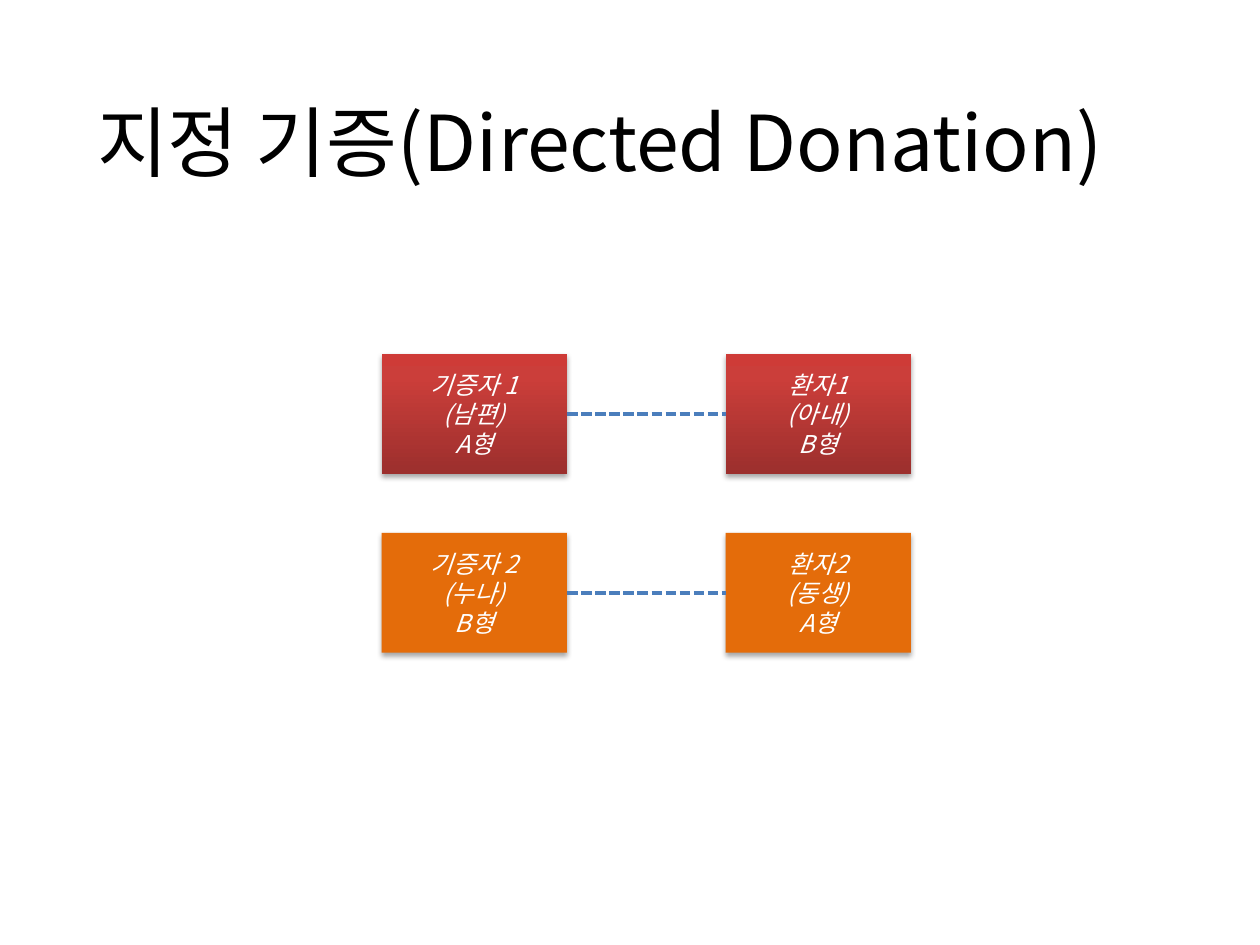
from copy import deepcopy

from lxml.etree import SubElement
from pptx import Presentation
from pptx.dml.color import RGBColor
from pptx.enum.dml import MSO_LINE
from pptx.enum.shapes import MSO_CONNECTOR, MSO_SHAPE
from pptx.enum.text import MSO_ANCHOR, MSO_AUTO_SIZE, PP_ALIGN
from pptx.oxml.ns import qn
from pptx.util import Inches, Pt

FONT = "Noto Sans CJK KR"
COLORS = {
    "title": "000000",
    "box_text": "FFFFFF",
    "orange": "E46C0A",
    "link": "4B7EBC",
    "shadow": "000000",
}
RED_GRADIENT = [(0, "9C2F2D"), (0.8, "CB3E3A"), (1, "CE3B37")]

BOX_WIDTH, BOX_HEIGHT = 1.47, 0.95
DONOR_LEFT, PATIENT_LEFT = 3.03, 5.76
FIRST_TOP, ROW_STEP = 2.81, 1.42

# Donor lines, patient lines, whether the pair is red
PAIRS = [
    ("기증자 1\n(남편)\nA형", "환자1\n(아내)\nB형", True),
    ("기증자 2\n(누나)\nB형", "환자2\n(동생)\nA형", False),
]


def rgb(name):
    return RGBColor.from_string(COLORS[name])


def format_runs(paragraph, size, color, italic=None):
    for run in paragraph.runs:
        font = run.font
        font.size, font.name, font.italic = Pt(size), FONT, italic
        font.color.rgb = rgb(color)
        SubElement(run._r.get_or_add_rPr(), qn("a:ea"), typeface=FONT)


def add_title(slide, text):
    title = slide.shapes.title
    title.left, title.top = Inches(0.67), Inches(0.44)
    title.width, title.height = Inches(8.62), Inches(1.45)
    text_frame = title.text_frame
    text_frame.text = text
    text_frame.word_wrap = True
    text_frame.auto_size = MSO_AUTO_SIZE.NONE
    text_frame.vertical_anchor = MSO_ANCHOR.MIDDLE
    paragraph = text_frame.paragraphs[0]
    paragraph.alignment = PP_ALIGN.LEFT
    paragraph.line_spacing = 0.9
    format_runs(paragraph, 44, "title")


def fill_red_gradient(shape):
    shape.fill.gradient()
    shape.fill.gradient_angle = 90
    # The default gradient has two stops; a third is needed
    stop_list = shape._element.spPr.find(".//" + qn("a:gsLst"))
    stop_list.append(deepcopy(stop_list[-1]))
    for stop, (position, color) in zip(shape.fill.gradient_stops, RED_GRADIENT):
        stop.position = position
        stop.color.rgb = RGBColor.from_string(color)


def add_soft_shadow(shape):
    shape.shadow.inherit = False
    effects = shape._element.spPr.find(qn("a:effectLst"))
    shadow = SubElement(effects, qn("a:outerShdw"), blurRad=str(Pt(3.1)),
                        dist=str(Pt(1.8)), dir="5400000", rotWithShape="0")
    color = SubElement(shadow, qn("a:srgbClr"), val=COLORS["shadow"])
    SubElement(color, qn("a:alpha"), val="35000")


def add_person_box(slide, left, top, text, is_red):
    shape = slide.shapes.add_shape(MSO_SHAPE.RECTANGLE, Inches(left), Inches(top),
                                   Inches(BOX_WIDTH), Inches(BOX_HEIGHT))
    if is_red:
        fill_red_gradient(shape)
    else:
        shape.fill.solid()
        shape.fill.fore_color.rgb = rgb("orange")
    shape.line.fill.background()
    add_soft_shadow(shape)

    text_frame = shape.text_frame
    text_frame.text = text
    text_frame.word_wrap = True
    text_frame.vertical_anchor = MSO_ANCHOR.MIDDLE
    for paragraph in text_frame.paragraphs:
        paragraph.alignment = PP_ALIGN.CENTER
        format_runs(paragraph, 14, "box_text", italic=True)
    return shape


def add_dashed_link(slide, donor, patient):
    connector = slide.shapes.add_connector(MSO_CONNECTOR.STRAIGHT, 0, 0, 0, 0)
    connector.begin_connect(donor, 3)
    connector.end_connect(patient, 1)
    connector.line.color.rgb = rgb("link")
    connector.line.width = Pt(2)
    connector.line.dash_style = MSO_LINE.SQUARE_DOT
    SubElement(connector._element.spPr, qn("a:effectLst"))


def main():
    presentation = Presentation()
    presentation.slide_width, presentation.slide_height = Inches(10), Inches(7.5)
    slide = presentation.slides.add_slide(presentation.slide_layouts[5])

    add_title(slide, "지정 기증(Directed Donation)")

    # One row for each donor and patient pair
    for row, (donor_text, patient_text, is_red) in enumerate(PAIRS):
        top = FIRST_TOP + row * ROW_STEP
        donor = add_person_box(slide, DONOR_LEFT, top, donor_text, is_red)
        patient = add_person_box(slide, PATIENT_LEFT, top, patient_text, is_red)
        add_dashed_link(slide, donor, patient)

    presentation.save("out.pptx")


if __name__ == "__main__":
    main()
